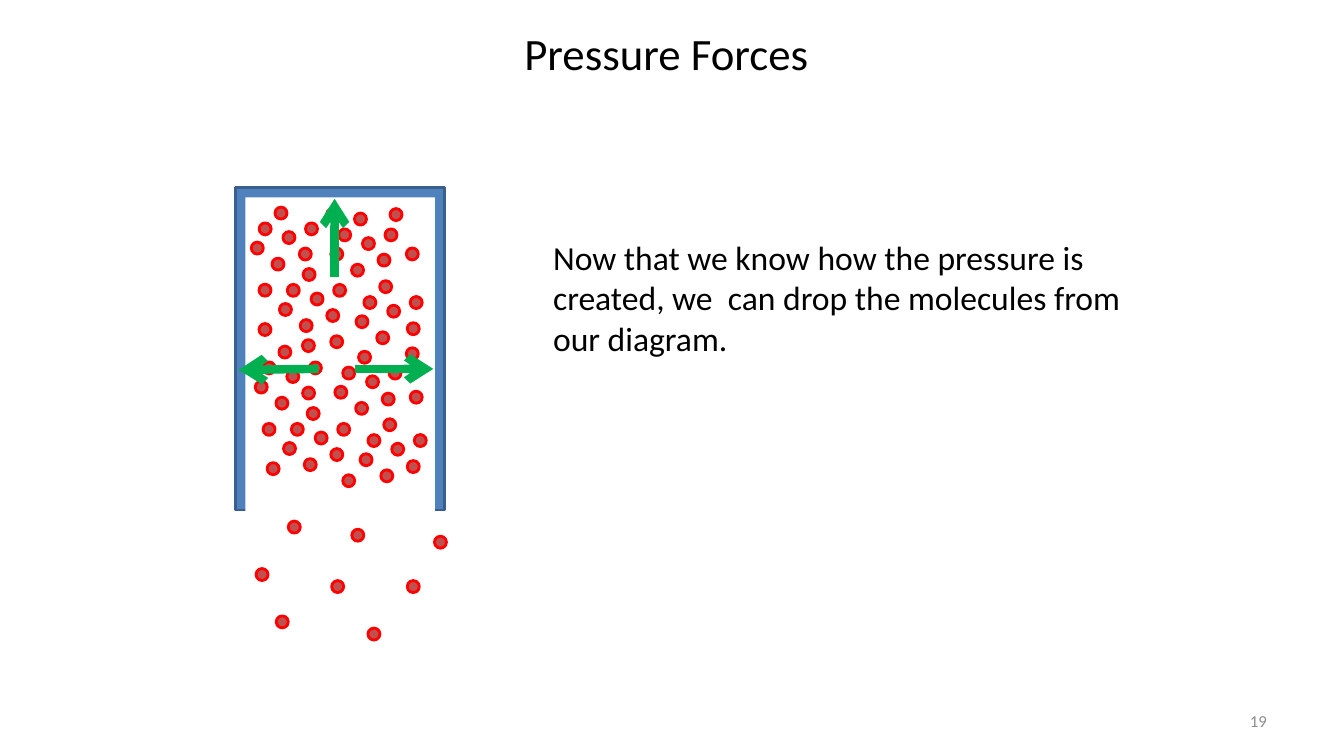
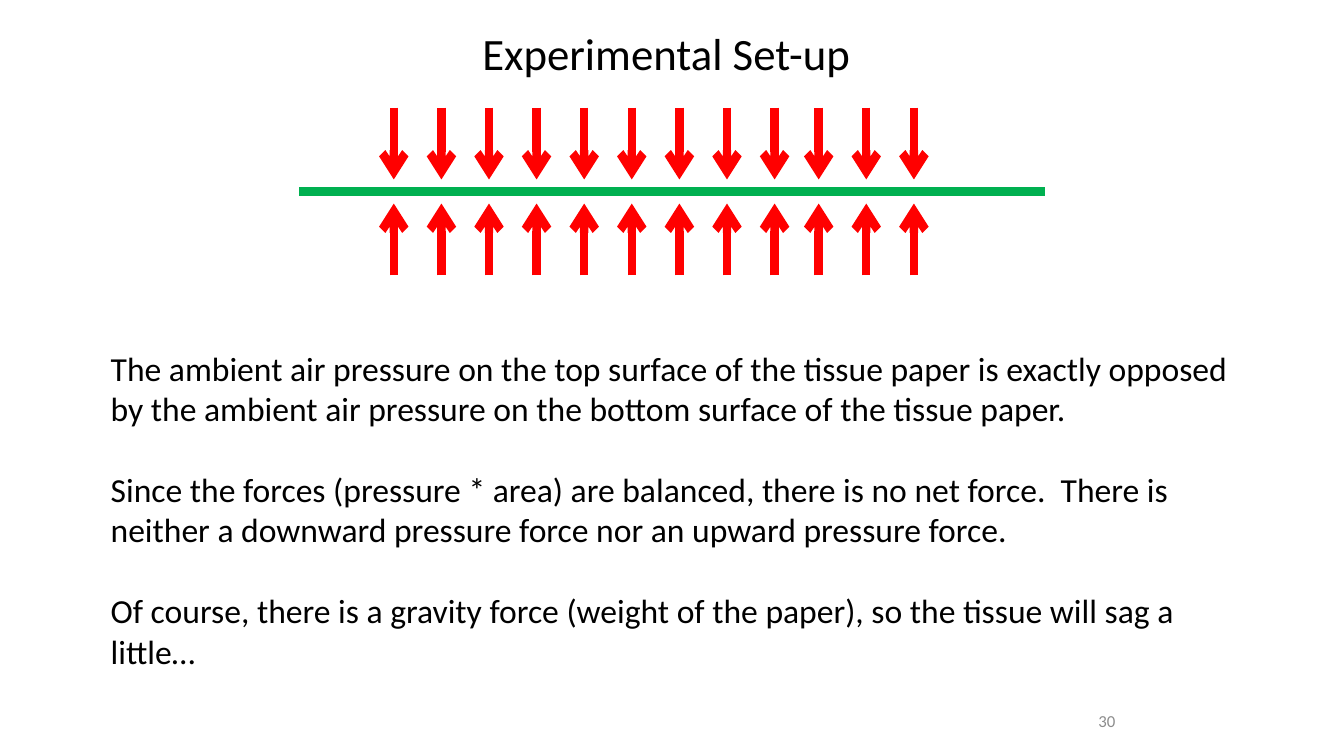
from lxml import etree
from pptx import Presentation
from pptx.dml import color
from pptx.enum import shapes, text
from pptx.oxml import ns
from pptx.util import Pt

FONT = "Calibri"
BLACK, WHITE, GREY = "000000", "FFFFFF", "8C8C8C"
GREEN, RED = "00B050", "FF0000"
WALL, WALL_EDGE, MOLECULE = "4F81BD", "3A5F8C", "C0504D"

DIAMETER = 8.6
CLUSTER = [(0, 0), (17, 6.2), (33.1, 0), (11.3, -11.3), (-5.6, 13.7), (9.2, 25.2)]
CLUSTER_ORIGINS = [
    (73.4, 29.5), (91.4, 77.8), (36.7, 69.1), (16.6, 25.2),
    (76.3, 128.2), (94.3, 176.4), (39.6, 168.4), (19.4, 124.5),
]
BETWEEN_CLUSTERS = [
    (101.5, 47.5), (122.4, 96.5), (64.9, 87.1), (45.3, 43.2),
    (104.5, 146.8), (122.4, 195), (67.8, 186.4), (47.6, 142.5),
    (16.5, 69), (16.5, 97.1), (19.4, 168.4), (67.7, 105.8),
    (121.7, 114.4), (64.8, 15), (110.1, 15), (124.5, 145.4),
    (121.7, 43.1), (22.3, 196.5), (76.3, 205.1), (47.5, 108.6),
]
ESCAPED = [
    (82.8, 244), (122.4, 280.7), (68.4, 280.7), (14.4, 272.1),
    (37.4, 238.2), (141.8, 249), (28.8, 305.9), (94.3, 314.6),
]


def rgb(hex_code):
    return color.RGBColor.from_string(hex_code)


def add_text(slide, box, *paragraphs, size=24, ink=BLACK, align=text.PP_ALIGN.LEFT,
             anchor=text.MSO_ANCHOR.TOP, gap=0):
    frame = slide.shapes.add_textbox(*map(Pt, box)).text_frame
    frame.word_wrap = True
    frame.vertical_anchor = anchor
    for index, wording in enumerate(paragraphs):
        paragraph = frame.add_paragraph() if index else frame.paragraphs[0]
        paragraph.alignment = align
        paragraph.space_before = Pt(gap if index else 0)
        run = paragraph.add_run()
        run.text = wording
        run.font.name = FONT
        run.font.size = Pt(size)
        run.font.color.rgb = rgb(ink)


def add_figure(group, kind, box, fill, edge=None):
    figure = group.shapes.add_shape(kind, *map(Pt, box))
    figure.shadow.inherit = False
    figure.fill.solid()
    figure.fill.fore_color.rgb = rgb(fill)
    if edge:
        figure.line.color.rgb = rgb(edge)
        figure.line.width = Pt(2)
    else:
        figure.line.fill.background()


def add_line(group, start, end, ink, arrow=True):
    line = group.shapes.add_connector(
        shapes.MSO_CONNECTOR.STRAIGHT, *map(Pt, (*start, *end)))
    line.line.color.rgb = rgb(ink)
    line.line.width = Pt(6)
    if arrow:
        etree.SubElement(line.line._get_or_add_ln(), ns.qn("a:tailEnd"), type="arrow")
    etree.SubElement(line._element.spPr, ns.qn("a:effectLst"))


def add_page(deck, title, number, number_box):
    slide = deck.slides.add_slide(deck.slide_layouts[6])
    add_text(slide, (168.5, 15, 615, 46), title, size=32, align=text.PP_ALIGN.CENTER)
    add_text(slide, number_box, number, size=12, ink=GREY,
             align=text.PP_ALIGN.RIGHT, anchor=text.MSO_ANCHOR.MIDDLE)
    return slide


def add_chamber(slide, box):
    left, top, width, height = box
    group = slide.shapes.add_group_shape()
    rectangle, oval = shapes.MSO_SHAPE.RECTANGLE, shapes.MSO_SHAPE.OVAL
    add_figure(group, rectangle, box, WALL, WALL_EDGE)
    add_figure(group, rectangle, (left + 6.8, top + 7, width - 13.6, height - 2), WHITE)

    clustered = [(x + dx, y + dy) for x, y in CLUSTER_ORIGINS for dx, dy in CLUSTER]
    for x, y in clustered + BETWEEN_CLUSTERS + ESCAPED:
        add_figure(group, oval, (left + x, top + y, DIAMETER, DIAMETER), MOLECULE, RED)

    forces = [((85, 129.5), (141, 129.5)), ((59, 129.5), (2, 130.2)), ((70.5, 64), (70.5, 8))]
    for (x1, y1), (x2, y2) in forces:
        add_line(group, (left + x1, top + y1), (left + x2, top + y2), GREEN)


def add_tissue(slide, left, middle, width):
    group = slide.shapes.add_group_shape()
    add_line(group, (left, middle), (left + width, middle), GREEN, arrow=False)
    offsets = [67.5 + 34 * i for i in range(9)] + [371 + 34 * i for i in range(3)]
    for side in (1, -1):
        for offset in offsets:
            x = left + offset
            add_line(group, (x, middle + 60 * side), (x, middle + 8.6 * side), RED)


def pressure_forces(deck):
    slide = add_page(deck, "Pressure Forces", "19", (688, 500.5, 224, 28.8))
    add_text(slide, (388, 165.6, 432, 94.3),
             "Now that we know how the pressure is created, we  can drop the "
             "molecules from our diagram.")
    add_chamber(slide, (168.5, 134, 149, 230.4))


def experimental_setup(deck):
    slide = add_page(deck, "Experimental Set-up", "30", (635.8, 500.5, 168, 28.8))
    add_tissue(slide, 213.8, 136.8, 532.8)
    add_text(slide, (72, 244.8, 828, 240),
             "The ambient air pressure on the top surface of the tissue paper is exactly "
             "opposed by the ambient air pressure on the bottom surface of the tissue paper.",
             "Since the forces (pressure * area) are balanced, there is no net force.  "
             "There is neither a downward pressure force nor an upward pressure force.",
             "Of course, there is a gravity force (weight of the paper), so the tissue "
             "will sag a little…",
             gap=29)


def main():
    deck = Presentation()
    deck.slide_width, deck.slide_height = Pt(960), Pt(540)
    pressure_forces(deck)
    experimental_setup(deck)
    deck.save("out.pptx")


if __name__ == "__main__":
    main()
